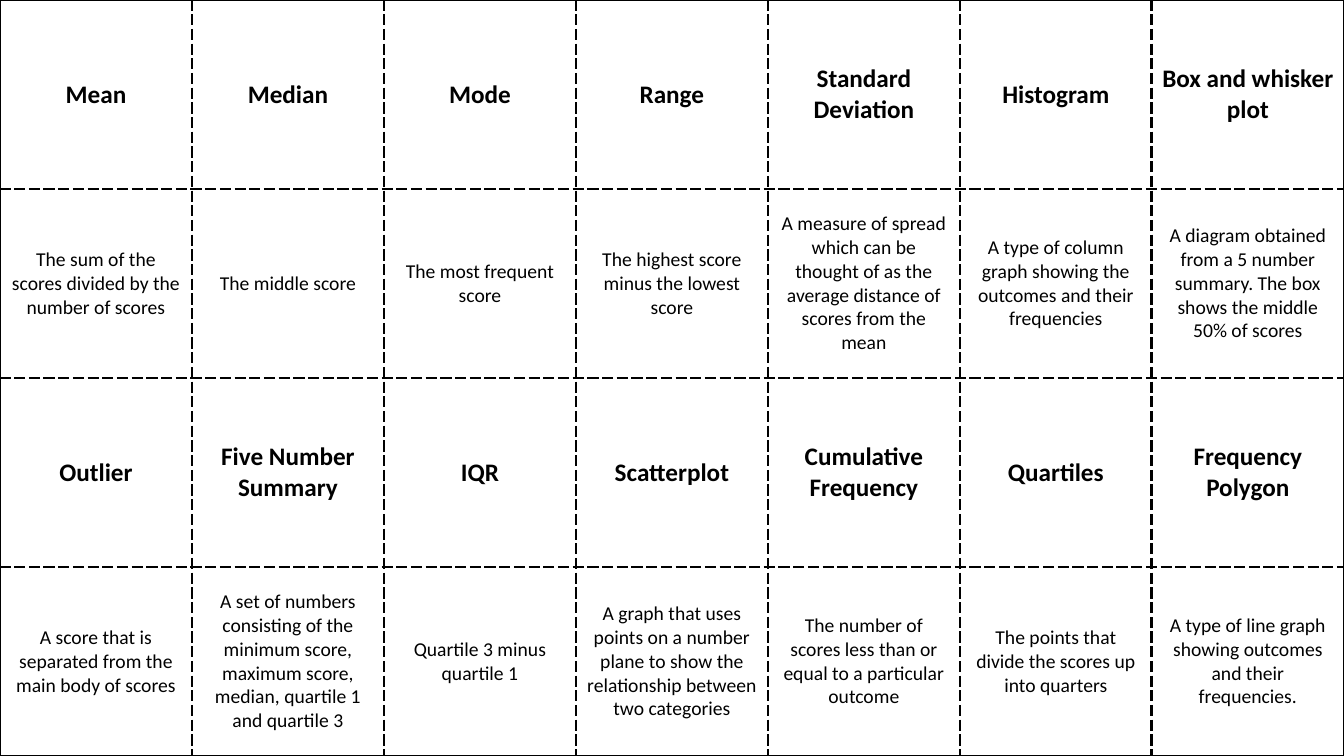
from dataclasses import dataclass

from lxml import etree
from pptx import Presentation
from pptx.dml.color import RGBColor
from pptx.enum import text
from pptx.oxml import ns
from pptx.table import _Cell
from pptx.util import Cm, Pt

SLIDE_WIDTH, SLIDE_HEIGHT = Cm(33.87), Cm(19.05)
BLACK = "000000"


@dataclass(frozen=True)
class Card:
    term: str
    definition: str


@dataclass(frozen=True)
class Style:
    size: int
    bold: bool


@dataclass(frozen=True)
class Border:
    width: float
    dash: str


TERM_STYLE = Style(18, True)
DEFINITION_STYLE = Style(14, False)
OUTER_EDGE = Border(1, "solid")
CUT_LINE = Border(2.25, "sysDash")

CARD_ROWS = [
    [
        Card("Mean", "The sum of the scores divided by the number of scores"),
        Card("Median", "The middle score"),
        Card("Mode", "The most frequent score"),
        Card("Range", "The highest score minus the lowest score"),
        Card("Standard Deviation", "A measure of spread which can be thought of as "
             "the average distance of scores from the mean"),
        Card("Histogram", "A type of column graph showing the outcomes and their frequencies"),
        Card("Box and whisker plot", "A diagram obtained from a 5 number summary. "
             "The box shows the middle 50% of scores"),
    ],
    [
        Card("Outlier", "A score that is separated from the main body of scores"),
        Card("Five Number Summary", "A set of numbers consisting of the minimum score, "
             "maximum score, median, quartile 1 and quartile 3"),
        Card("IQR", "Quartile 3 minus quartile 1"),
        Card("Scatterplot", "A graph that uses points on a number plane to show "
             "the relationship between two categories"),
        Card("Cumulative Frequency",
             "The number of scores less than or equal to a particular outcome"),
        Card("Quartiles", "The points that divide the scores up into quarters"),
        Card("Frequency Polygon",
             "A type of line graph showing outcomes and their frequencies."),
    ],
]


def color(value: str) -> RGBColor:
    return RGBColor.from_string(value)


def add_border(cell: _Cell, side: str, border: Border) -> None:
    line = etree.SubElement(cell._tc.get_or_add_tcPr(), ns.qn(f"a:ln{side}"),
                            w=str(Pt(border.width)))
    fill = etree.SubElement(line, ns.qn("a:solidFill"))
    etree.SubElement(fill, ns.qn("a:srgbClr"), val=BLACK)
    etree.SubElement(line, ns.qn("a:prstDash"), val=border.dash)


def fill_cell(cell: _Cell, wording: str, style: Style) -> None:
    cell.text = wording
    cell.vertical_anchor = text.MSO_ANCHOR.MIDDLE
    cell.fill.background()
    paragraph = cell.text_frame.paragraphs[0]
    paragraph.alignment = text.PP_ALIGN.CENTER
    font = paragraph.font
    font.name, font.size, font.bold = "Calibri", Pt(style.size), style.bold
    font.color.rgb = color(BLACK)


def main() -> None:
    deck = Presentation()
    deck.slide_width, deck.slide_height = SLIDE_WIDTH, SLIDE_HEIGHT
    slide = deck.slides.add_slide(deck.slide_layouts[6])

    row_count, column_count = 2 * len(CARD_ROWS), len(CARD_ROWS[0])
    glossary = slide.shapes.add_table(
        row_count, column_count, 0, 0, SLIDE_WIDTH, SLIDE_HEIGHT).table
    glossary.first_row = glossary.horz_banding = False

    for pair, cards in enumerate(CARD_ROWS):
        for column, card in enumerate(cards):
            faces = [(card.term, TERM_STYLE), (card.definition, DEFINITION_STYLE)]
            for row, (wording, style) in enumerate(faces, start=2 * pair):
                cell = glossary.cell(row, column)
                on_edge = {"L": column == 0, "R": column == column_count - 1,
                           "T": row == 0, "B": row == row_count - 1}
                for side, outer in on_edge.items():
                    add_border(cell, side, OUTER_EDGE if outer else CUT_LINE)
                fill_cell(cell, wording, style)

    deck.save("out.pptx")


if __name__ == "__main__":
    main()
